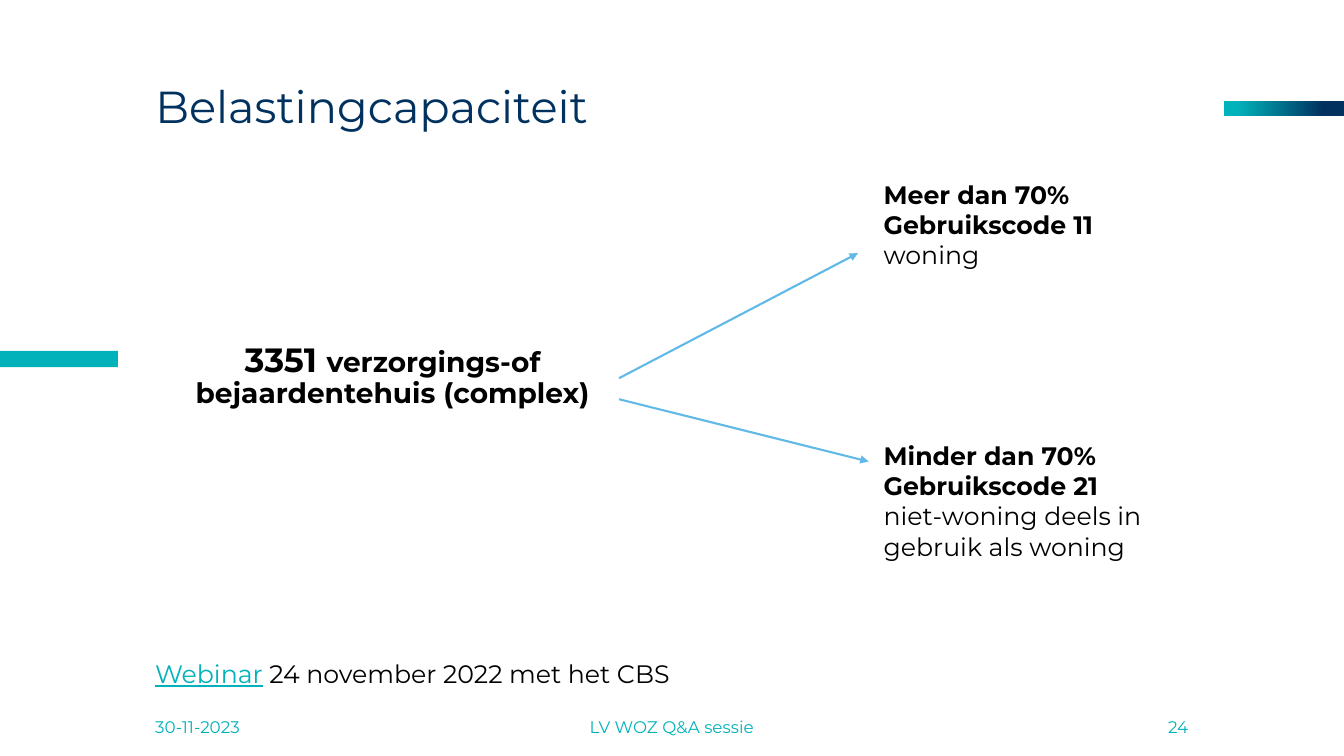
from lxml.etree import SubElement
from pptx import Presentation
from pptx.dml.color import RGBColor
from pptx.enum.shapes import MSO_CONNECTOR, MSO_SHAPE
from pptx.enum.text import MSO_ANCHOR, MSO_AUTO_SIZE, PP_ALIGN
from pptx.oxml.ns import qn
from pptx.util import Cm, Pt

COLORS = {"teal": "01B2BA", "navy": "00315F", "black": "000000", "sky": "61B9E8"}
FONT = "Montserrat"


def rgb(name):
    return RGBColor.from_string(COLORS[name])


def write(sp, paragraphs, size=18, color="black", align=PP_ALIGN.LEFT,
          anchor=MSO_ANCHOR.TOP, spacing=None, before=None):
    """Fill sp with paragraphs, each a list of (text, run overrides)."""
    tf = sp.text_frame
    tf.word_wrap = True
    tf.auto_size = MSO_AUTO_SIZE.NONE
    tf.vertical_anchor = anchor
    for i, runs in enumerate(paragraphs):
        p = tf.add_paragraph() if i else tf.paragraphs[0]
        p.alignment = align
        p.line_spacing = spacing
        p.space_before = before
        for text, style in runs:
            r = p.add_run()
            r.text = text
            r.font.name = FONT
            r.font.size = Pt(style.get("size", size))
            r.font.bold = style.get("bold", False)
            r.font.underline = style.get("underline", False)
            r.font.color.rgb = rgb(style.get("color", color))


prs = Presentation()
prs.slide_width, prs.slide_height = Cm(33.87), Cm(19.05)
s = prs.slides.add_slide(prs.slide_layouts[5])

# Accent bars at the slide edges
bars = []
for x, y, w, h in [(30.84, 2.54, 3.03, 0.38), (0, 8.84, 2.97, 0.41)]:
    bar = s.shapes.add_shape(MSO_SHAPE.RECTANGLE, Cm(x), Cm(y), Cm(w), Cm(h))
    bar.shadow.inherit = False
    bar.line.fill.background()
    bars.append(bar)
right_bar, left_bar = bars
left_bar.fill.solid()
left_bar.fill.fore_color.rgb = rgb("teal")
right_bar.fill.gradient()
right_bar.fill.gradient_angle = 0
for stop, (position, color) in zip(right_bar.fill.gradient_stops,
                                   [(0.11, "teal"), (0.83, "navy")]):
    stop.position = position
    stop.color.rgb = rgb(color)

# Title
title = s.shapes.title
title.left, title.top, title.width, title.height = Cm(3.66), Cm(1.45), Cm(26.54), Cm(2.59)
title.text_frame.margin_right = Cm(0.89)
write(title, [[("Belastingcapaciteit", {})]], size=32, color="navy",
      anchor=MSO_ANCHOR.MIDDLE, spacing=0.9)

# Footer
for text, x, w, align in [("30-11-2023", 3.66, 3.07, PP_ALIGN.LEFT),
                          ("LV WOZ Q&A sessie", 7.72, 18.42, PP_ALIGN.CENTER),
                          ("24", 27.13, 3.07, PP_ALIGN.RIGHT)]:
    footer = s.shapes.add_textbox(Cm(x), Cm(17.93), Cm(w), Cm(0.79))
    write(footer, [[(text, {})]], size=12, color="teal", align=align,
          anchor=MSO_ANCHOR.MIDDLE)

# Object code and webinar line
bold = {"bold": True}
code = s.shapes.add_textbox(Cm(3.86), Cm(8.53), Cm(12.07), Cm(2.59))
write(code, [[("3351 ", {"bold": True, "size": 24}),
              ("verzorgings-of bejaardentehuis (complex)", bold)]],
      size=20, align=PP_ALIGN.CENTER, spacing=0.9, before=Pt(10))

webinar = s.shapes.add_textbox(Cm(3.66), Cm(16.46), Cm(21.03), Cm(1.02))
write(webinar, [[("Webinar", {"color": "teal", "underline": True}),
                 (" 24 november 2022 met het CBS", {})]])

# Outcomes, each with the arrow that leads to it
for share, usage, meaning, y, w, h, start_y, end in [
    ("Meer dan 70%", "Gebruikscode 11 ", "woning",
     4.39, 7.65, 2.57, 9.53, (21.62, 6.38)),
    ("Minder dan 70%", "Gebruikscode 21 ", "niet-woning deels in gebruik als woning",
     10.97, 7.32, 3.33, 10.06, (21.89, 11.63)),
]:
    outcome = s.shapes.add_textbox(Cm(22.02), Cm(y), Cm(w), Cm(h))
    write(outcome, [[(share, bold)], [(usage, bold), (meaning, {})]])

    arrow = s.shapes.add_connector(MSO_CONNECTOR.STRAIGHT, Cm(15.6), Cm(start_y),
                                   Cm(end[0]), Cm(end[1]))
    arrow.line.color.rgb = rgb("sky")
    arrow.line.width = Pt(1.5)
    SubElement(arrow.line._get_or_add_ln(), qn("a:tailEnd"), type="triangle")
    SubElement(arrow._element.spPr, qn("a:effectLst"))

prs.save("out.pptx")
